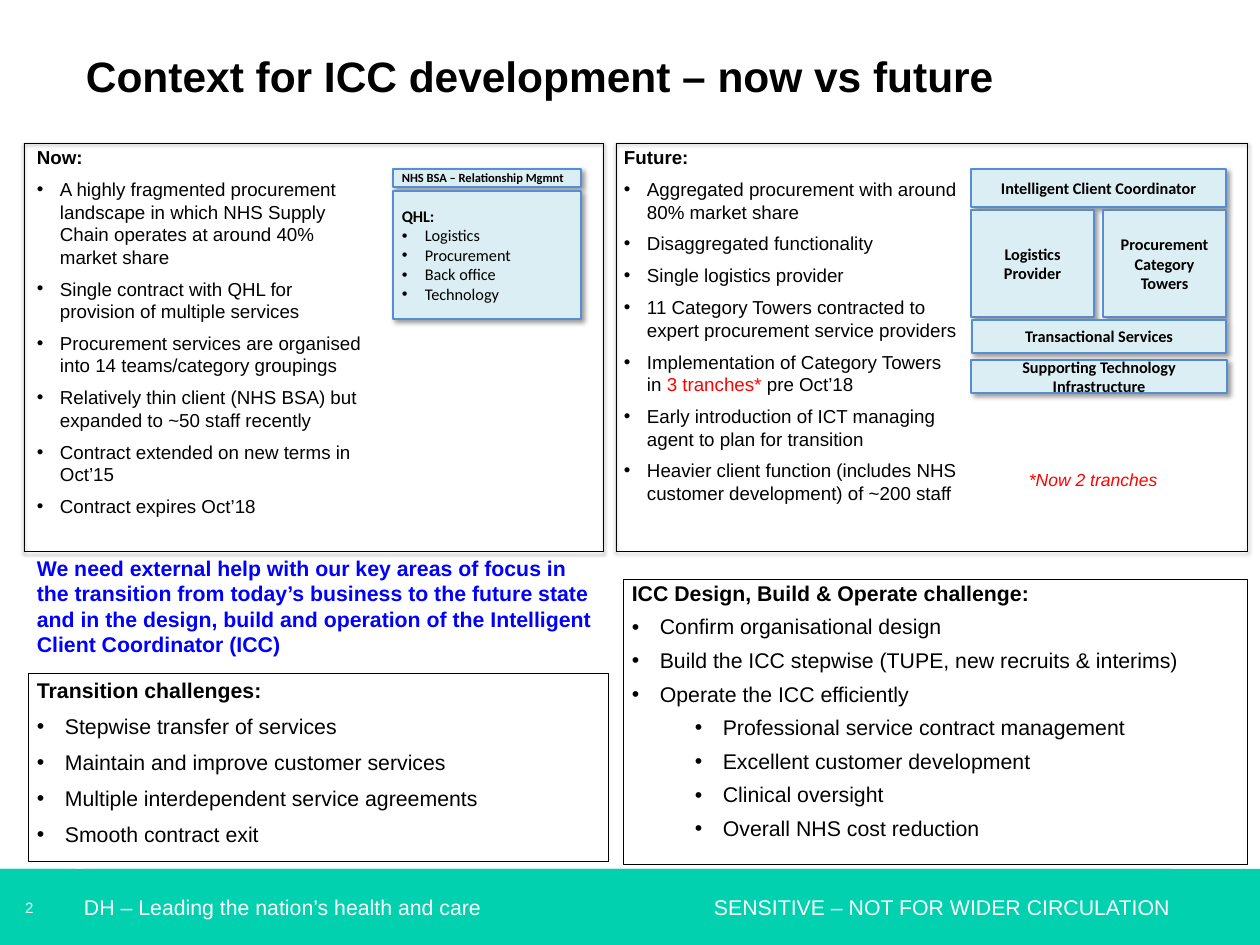
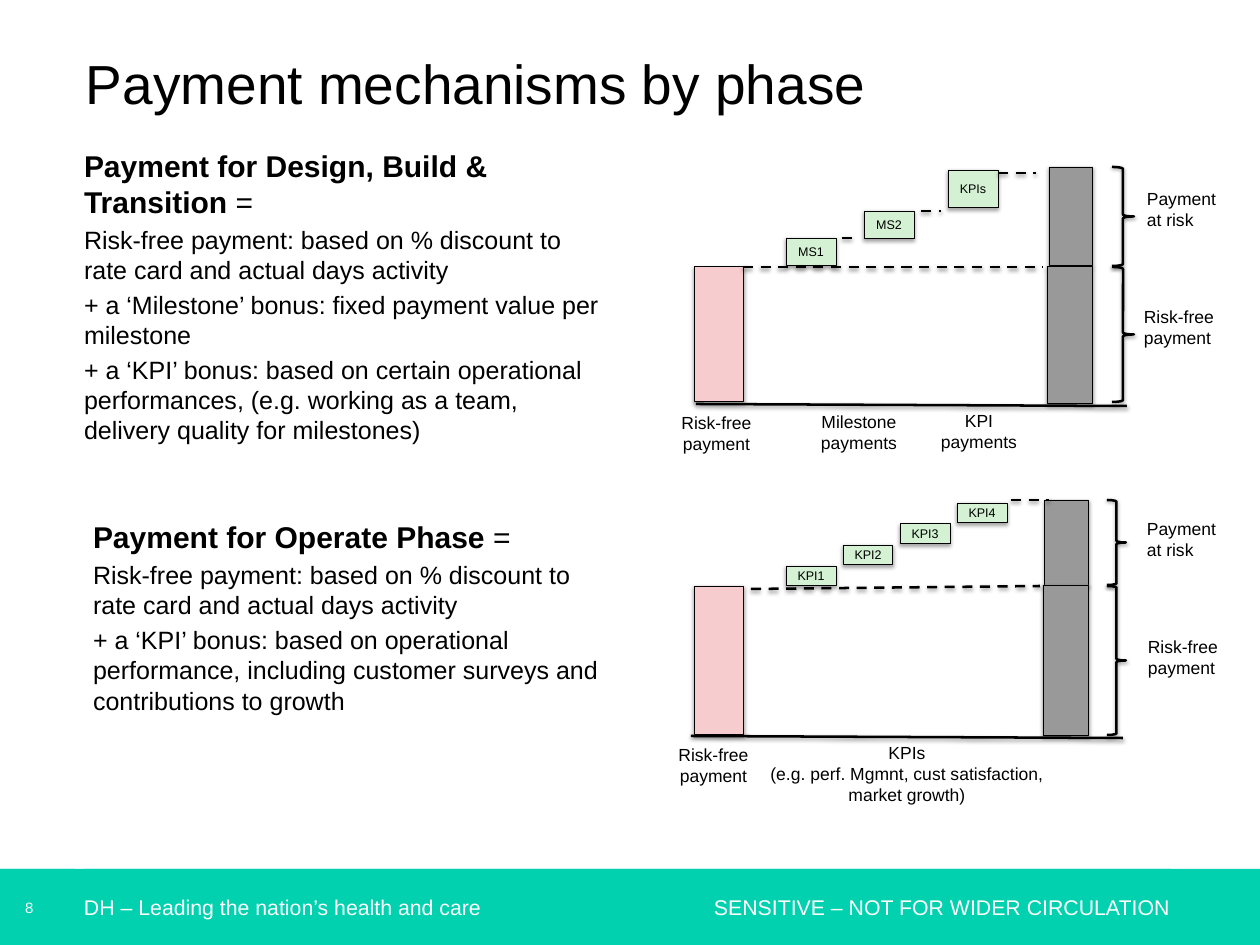
from collections import namedtuple

import pptx
import pptx.dml.color
import pptx.enum.dml
import pptx.enum.shapes
import pptx.enum.text
import pptx.oxml
import pptx.oxml.ns
import pptx.util
from lxml import etree

RGBColor = pptx.dml.color.RGBColor
Preset = pptx.enum.shapes.MSO_SHAPE
Align = pptx.enum.text.PP_ALIGN
Anchor = pptx.enum.text.MSO_ANCHOR
Pt = pptx.util.Pt
qn = pptx.oxml.ns.qn

EMU_PER_PX = 10160
SLIDE_WIDTH, SLIDE_HEIGHT = 1260, 945

BLACK = RGBColor(0x00, 0x00, 0x00)
WHITE = RGBColor(0xFF, 0xFF, 0xFF)
RED = RGBColor(0xFF, 0x00, 0x00)
BLUE = RGBColor(0x00, 0x00, 0xFF)
BAND = RGBColor(0x01, 0xD1, 0xAE)
FRAME_GREEN = RGBColor(0x20, 0xBF, 0x1F)
BOX_FILL = RGBColor(0xDB, 0xEE, 0xF4)
BOX_LINE = RGBColor(0x55, 0x8E, 0xD5)
PINK = RGBColor(0xF7, 0xCC, 0xCF)
LIGHT_GREEN = RGBColor(0xD4, 0xF2, 0xD3)
GREY = RGBColor(0x99, 0x99, 0x99)

Run = namedtuple("Run", "text bold color italic", defaults=(False, BLACK, False))
# left is the indent of a bulleted paragraph; 0 means no bullet
Paragraph = namedtuple("Paragraph", "runs size left", defaults=(0,))
Shadow = namedtuple("Shadow", "opacity blur distance angle")
BOX_SHADOW = Shadow(40, 4, 3, 45)
SHAPE_SHADOW = Shadow(35, 3.1, 1.8, 90)
LINE_SHADOW = Shadow(38, 3.1, 1.6, 90)
DEFAULT_INSETS = (9, 4, 9, 4)
WIDE_INSETS = (13, 6, 13, 6)
NO_INSETS = (0, 0, 0, 0)


def plain(size, *lines, **style):
    return [Paragraph([Run(line, **style)], size) for line in lines]


def bullets(size, left, *items):
    """Each item is a string or a list of runs."""
    return [Paragraph([Run(item)] if isinstance(item, str) else item, size, left)
            for item in items]


FOOTER = "DH – Leading the nation’s health and care\tSENSITIVE – NOT FOR WIDER CIRCULATION"

NOW = plain(15, "Now:", bold=True) + bullets(
    15, 23,
    "A highly fragmented procurement landscape in which NHS Supply Chain "
    "operates at around 40% market share",
    "Single contract with QHL for provision of multiple services",
    "Procurement services are organised into 14 teams/category groupings",
    "Relatively thin client (NHS BSA) but expanded to ~50 staff recently",
    "Contract extended on new terms in Oct’15",
    "Contract expires Oct’18")
FUTURE = plain(15, "Future:", bold=True) + bullets(
    15, 23,
    "Aggregated procurement with around 80% market share",
    "Disaggregated functionality",
    "Single logistics provider",
    "11 Category Towers contracted to expert procurement service providers",
    [Run("Implementation of Category Towers in "), Run("3 tranches* ", color=RED),
     Run("pre Oct’18")],
    "Early introduction of ICT managing agent to plan for transition",
    "Heavier client function (includes NHS customer development) of ~200 staff")
TRANSITION = plain(17, "Transition challenges:", bold=True) + bullets(
    17, 28,
    "Stepwise transfer of services",
    "Maintain and improve customer services",
    "Multiple interdependent service agreements",
    "Smooth contract exit")
CHALLENGE = (
    plain(17, "ICC Design, Build & Operate challenge:", bold=True)
    + bullets(17, 28, "Confirm organisational design",
              "Build the ICC stepwise (TUPE, new recruits & interims)",
              "Operate the ICC efficiently")
    + bullets(17, 91, "Professional service contract management",
              "Excellent customer development", "Clinical oversight",
              "Overall NHS cost reduction"))
HELP = plain(17, "We need external help with our key areas of focus in the transition "
             "from today’s business to the future state and in the design, build and "
             "operation of the Intelligent Client Coordinator (ICC)", bold=True, color=BLUE)

FRAMES = [(24, 143, 579, 408), (616, 143, 632, 408)]
NOW_BOXES = [
    ((393, 169, 188, 18), plain(10, "NHS BSA – Relationship Mgmnt", bold=True)),
    ((393, 191, 188, 128), plain(13, "QHL:", bold=True) + bullets(
        13, 23, "Logistics", "Procurement", "Back office", "Technology")),
]
FUTURE_BOXES = [
    ((971, 169, 255, 38), ["Intelligent Client Coordinator"]),
    ((971, 210, 123, 107), ["Logistics Provider"]),
    ((1103, 210, 123, 107), ["Procurement", "Category Towers"]),
    ((971, 360, 256, 33), ["Supporting Technology Infrastructure"]),
    ((972, 320, 254, 33), ["Transactional Services"]),
]

RISK_FREE = "Risk-free payment: based on % discount to rate card and actual days activity"
PHASES = [
    {
        "heading": "Payment for Design, Build & Transition ",
        "terms": [RISK_FREE,
                  "+ a ‘Milestone’ bonus: fixed payment value per milestone",
                  "+ a ‘KPI’ bonus: based on certain operational performances, "
                  "(e.g. working as a team, delivery quality for milestones)"],
        "text_at": (84, 147, 517, 311),
        "axis": (696, 404, 1127, 406),
        "risk_free_bar": (694, 267, 50, 135),
        "steps": [("MS1", (786, 238, 50, 28)), ("MS2", (864, 211, 50, 28)),
                  ("KPIs", (948, 170, 50, 38))],
        "totals": [(1049, 167, 44, 99), (1047, 267, 46, 137)],
        "braces": [(1112, 167, 22, 99), (1112, 267, 22, 135)],
        "dashes": [(842, 238, 857, 238), (921, 211, 941, 211), (998, 173, 1036, 173),
                   (743, 267, 1043, 267)],
        "axis_labels": [(["Risk-free", "payment"], (672, 408, 89, 51)),
                        (["Milestone", "payments"], (812, 407, 94, 51)),
                        (["KPI", "payments"], (932, 406, 94, 51))],
        "brace_labels": [(["Payment", "at risk"], (1138, 184, 88, 51)),
                         (["Risk-free", "payment"], (1135, 302, 89, 51))],
    },
    {
        "heading": "Payment for Operate Phase ",
        "terms": [RISK_FREE,
                  "+ a ‘KPI’ bonus: based on operational performance, including "
                  "customer surveys and contributions to growth"],
        "text_at": (93, 519, 517, 295),
        "axis": (691, 736, 1123, 738),
        "risk_free_bar": (694, 586, 50, 149),
        "steps": [(f"KPI{i + 1}", (786 + 57 * i, 566 - 21 * i, 50, 20)) for i in range(4)],
        "totals": [(1045, 500, 44, 86), (1043, 585, 46, 151)],
        "braces": [(1107, 500, 19, 85), (1107, 586, 19, 149)],
        "dashes": [(1011, 500, 1049, 500), (751, 589, 1040, 586)],
        "axis_labels": [(["Risk-free", "payment"], (669, 740, 89, 51)),
                        (["KPIs", "(e.g. perf. Mgmnt, cust satisfaction, market growth)"],
                         (758, 738, 298, 73))],
        "brace_labels": [(["Payment", "at risk"], (1138, 514, 88, 51)),
                         (["Risk-free", "payment"], (1139, 632, 89, 51))],
    },
]


def emu(*lengths):
    return [pptx.util.Emu(round(length * EMU_PER_PX)) for length in lengths]


def add_element(parent, tag, **attributes):
    return etree.SubElement(parent, qn(tag), {k: str(v) for k, v in attributes.items()})


def set_effects(shape, shadow=None):
    """Replace the theme shadow; call once fill and line are set."""
    effects = add_element(shape.element.spPr, "a:effectLst")
    if shadow:
        outer = add_element(effects, "a:outerShdw", blurRad=Pt(shadow.blur),
                            dist=Pt(shadow.distance), dir=shadow.angle * 60000,
                            algn="tl", rotWithShape=0)
        color = add_element(outer, "a:srgbClr", val=BLACK)
        add_element(color, "a:alpha", val=shadow.opacity * 1000)


def write(shape, paragraphs, font="Arial", align=Align.LEFT, anchor=Anchor.TOP,
          insets=DEFAULT_INSETS, gap=0, line_spacing=None, hang=23):
    """gap is the space before a paragraph as a share of its text size."""
    frame = shape.text_frame
    frame.word_wrap = True
    frame.vertical_anchor = anchor
    (frame.margin_left, frame.margin_top,
     frame.margin_right, frame.margin_bottom) = emu(*insets)
    for index, content in enumerate(paragraphs):
        paragraph = frame.add_paragraph() if index else frame.paragraphs[0]
        paragraph.alignment = align
        paragraph.space_before = Pt(content.size * gap)
        if line_spacing:
            paragraph.line_spacing = line_spacing
        if content.left:
            properties = paragraph._p.get_or_add_pPr()
            properties.set("marL", str(emu(content.left)[0]))
            properties.set("indent", str(-emu(hang)[0]))
            add_element(properties, "a:buFont", typeface="Arial")
            add_element(properties, "a:buChar", char="•")
        for part in content.runs:
            run = paragraph.add_run()
            run.text = part.text
            run.font.name, run.font.size = font, Pt(content.size)
            run.font.bold, run.font.italic = part.bold, part.italic
            run.font.color.rgb = part.color


def add_text(slide, at, paragraphs, **style):
    write(slide.shapes.add_textbox(*emu(*at)), paragraphs, **style)


def add_shape(slide, at, fill=None, line=BLACK, width=0.75, shadow=None,
              preset=Preset.RECTANGLE):
    shape = slide.shapes.add_shape(preset, *emu(*at))
    if fill is None:
        shape.fill.background()
    else:
        shape.fill.solid()
        shape.fill.fore_color.rgb = fill
    if line is None:
        shape.line.fill.background()
    else:
        shape.line.color.rgb = line
        shape.line.width = Pt(width)
    set_effects(shape, shadow)
    return shape


def add_line(slide, ends, dashed=False):
    connector = slide.shapes.add_connector(pptx.enum.shapes.MSO_CONNECTOR.STRAIGHT, *emu(*ends))
    connector.line.color.rgb = BLACK
    connector.line.width = Pt(2)
    if dashed:
        connector.line.dash_style = pptx.enum.dml.MSO_LINE.DASH
    set_effects(connector, LINE_SHADOW)


def add_slide(presentation, title, title_size, number, bold=False):
    """Add a slide with its title, footer band and page number."""
    slide = presentation.slides.add_slide(presentation.slide_layouts[5])
    heading = slide.shapes.title
    heading.left, heading.top, heading.width, heading.height = emu(86, 50, 1086, 99)
    write(heading, plain(title_size, title, bold=bold), insets=NO_INSETS)

    add_shape(slide, (0, 869, SLIDE_WIDTH, 76), BAND, line=None)
    page = add_shape(slide, (0, 869, 75, 76), BAND, line=None)
    write(page, plain(12, number, color=WHITE), anchor=Anchor.MIDDLE, insets=(25, 0, 0, 0))
    footer = add_shape(slide, (84, 869, 1087, 76), BAND, line=None)
    write(footer, plain(17, FOOTER, color=WHITE), anchor=Anchor.MIDDLE, insets=NO_INSETS)
    properties = footer.text_frame.paragraphs[0]._p.get_or_add_pPr()
    tabs = add_element(properties, "a:tabLst")
    add_element(tabs, "a:tab", pos=emu(630)[0], algn="l")
    return slide


def build_context(presentation):
    slide = add_slide(presentation, "Context for ICC development – now vs future", 34, "2",
                      bold=True)
    for at in FRAMES:
        frame = add_shape(slide, at, FRAME_GREEN, shadow=SHAPE_SHADOW, preset=Preset.FRAME)
        frame.adjustments[0] = 0
    add_text(slide, (24, 140, 360, 399), NOW, insets=WIDE_INSETS, gap=0.5)
    add_text(slide, (611, 140, 360, 388), FUTURE, insets=WIDE_INSETS, gap=0.5)

    boxes = [(at, text, Align.LEFT) for at, text in NOW_BOXES]
    boxes += [(at, plain(13, *lines, bold=True), Align.CENTER) for at, lines in FUTURE_BOXES]
    for at, text, align in boxes:
        box = add_shape(slide, at, BOX_FILL, BOX_LINE, 1, BOX_SHADOW)
        write(box, text, font="Calibri", align=align, anchor=Anchor.MIDDLE)

    write(add_shape(slide, (28, 673, 581, 189)), TRANSITION, gap=0.5, hang=28)
    write(add_shape(slide, (623, 579, 624, 285)), CHALLENGE, gap=0.5, hang=28,
          line_spacing=0.9)
    add_text(slide, (28, 551, 574, 112), HELP)
    add_text(slide, (1020, 465, 208, 31), plain(14, "*Now 2 tranches", color=RED, italic=True))


def draw_phase(slide, phase):
    heading = Paragraph([Run(phase["heading"], bold=True), Run("=")], 24)
    add_text(slide, phase["text_at"], [heading] + plain(20, *phase["terms"]),
             insets=NO_INSETS, gap=0.2)

    add_line(slide, phase["axis"])
    add_shape(slide, phase["risk_free_bar"], PINK, shadow=SHAPE_SHADOW)
    for at in phase["totals"]:
        add_shape(slide, at, GREY, shadow=SHAPE_SHADOW)
    for at in phase["braces"]:
        add_shape(slide, at, width=2, shadow=LINE_SHADOW, preset=Preset.RIGHT_BRACE)
    for name, at in phase["steps"]:
        step = add_shape(slide, at, LIGHT_GREEN, shadow=SHAPE_SHADOW)
        write(step, plain(10, name), align=Align.CENTER, anchor=Anchor.MIDDLE)
    for ends in phase["dashes"]:
        add_line(slide, ends, dashed=True)
    for labels, align in (("axis_labels", Align.CENTER), ("brace_labels", Align.LEFT)):
        for lines, at in phase[labels]:
            add_text(slide, at, plain(14, *lines), align=align)


def main():
    presentation = pptx.Presentation()
    presentation.slide_width, presentation.slide_height = emu(SLIDE_WIDTH, SLIDE_HEIGHT)
    build_context(presentation)
    payments = add_slide(presentation, "Payment mechanisms by phase", 44, "8")
    for phase in PHASES:
        draw_phase(payments, phase)
    presentation.save("out.pptx")


if __name__ == "__main__":
    main()
